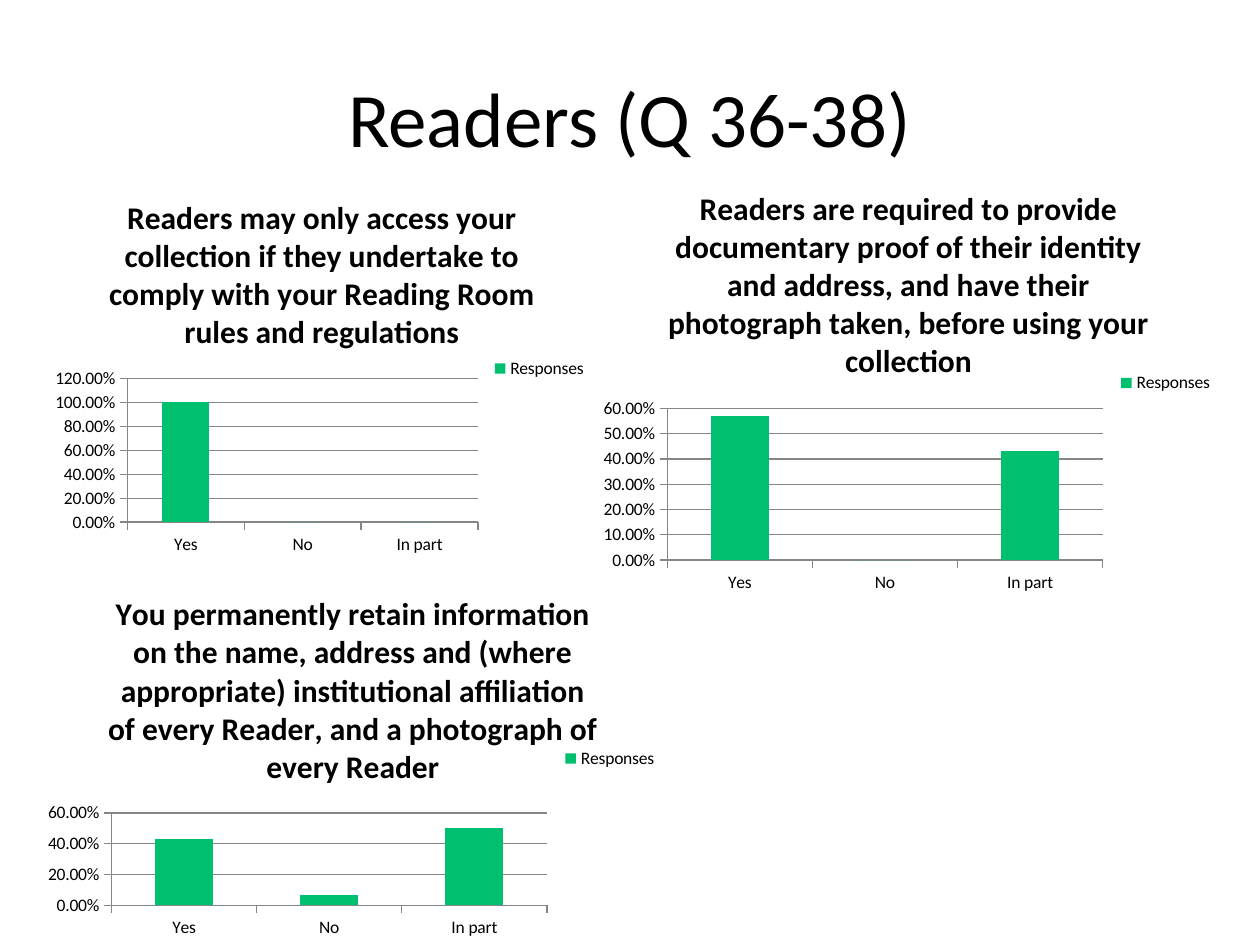
from dataclasses import dataclass

from pptx import Presentation
from pptx.chart.data import CategoryChartData
from pptx.dml.color import RGBColor
from pptx.enum.chart import XL_CHART_TYPE, XL_LEGEND_POSITION, XL_TICK_MARK
from pptx.enum.text import MSO_ANCHOR, PP_ALIGN
from pptx.util import Inches, Pt

COLUMN = XL_CHART_TYPE.COLUMN_CLUSTERED
RIGHT = XL_LEGEND_POSITION.RIGHT
OUT = XL_TICK_MARK.OUTSIDE
NONE = XL_TICK_MARK.NONE
CENTER = PP_ALIGN.CENTER
MIDDLE = MSO_ANCHOR.MIDDLE


@dataclass(frozen=True)
class Theme:
    font: str = "Calibri"
    ink: RGBColor = RGBColor(0, 0, 0)
    bar: RGBColor = RGBColor(0x00, 0xBF, 0x6F)
    grid: RGBColor = RGBColor(0x86, 0x86, 0x86)
    title: int = 44
    head: int = 18
    label: int = 10


ANSWERS = ["Yes", "No", "In part"]
# Question, box in inches, shares per answer, axis maximum, axis step
CHARTS = [
    ("Readers may only access your collection if they undertake to comply "
     "with your Reading Room rules and regulations",
     (0.35, 1.39, 4.41, 3.07), (1, 0, 0), 1.2, 0.2),
    ("Readers are required to provide documentary proof of their identity "
     "and address, and have their photograph taken, before using your collection",
     (4.69, 1.31, 5.04, 3.46), (0.57, 0, 0.43), 0.6, 0.1),
    ("You permanently retain information on the name, address and (where "
     "appropriate) institutional affiliation of every Reader, and a "
     "photograph of every Reader",
     (0.28, 4.54, 5.04, 2.96), (0.43, 0.07, 0.5), 0.6, 0.2),
]


def style(font, theme, size, bold=False):
    font.name = theme.font
    font.size = Pt(size)
    font.bold = bold
    font.color.rgb = theme.ink


def write(frame, text, *, theme, size, bold=False):
    """Fill a text frame with one centred, formatted paragraph."""
    para = frame.paragraphs[0]
    para.alignment = CENTER
    run = para.add_run()
    run.text = text
    style(run.font, theme, size, bold)


class Deck:
    """Holds the theme and the slide being built."""

    def __init__(self, slide, theme):
        self.slide = slide
        self.theme = theme

    def title(self, text, box):
        shape = self.slide.shapes.title
        shape.left, shape.top, shape.width, shape.height = map(Inches, box)
        frame = shape.text_frame
        frame.word_wrap = True
        frame.vertical_anchor = MIDDLE
        write(frame, text, theme=self.theme, size=self.theme.title)

    def chart(self, text, box, shares, top, step):
        theme = self.theme
        data = CategoryChartData(number_format="0.00%")
        data.categories = ANSWERS
        data.add_series("Responses", shares)
        chart = self.slide.shapes.add_chart(COLUMN, *map(Inches, box), data).chart
        style(chart.font, theme, theme.label)
        chart.has_title = True
        write(chart.chart_title.text_frame, text,
              theme=theme, size=theme.head, bold=True)
        chart.has_legend = True
        chart.legend.position = RIGHT
        chart.legend.include_in_layout = False

        plot = chart.plots[0]
        plot.gap_width = 150
        plot.vary_by_categories = False
        fill = plot.series[0].format.fill
        fill.solid()
        fill.fore_color.rgb = theme.bar

        shares_axis = chart.value_axis
        shares_axis.minimum_scale = 0
        shares_axis.maximum_scale = top
        shares_axis.major_unit = step
        shares_axis.has_major_gridlines = True
        shares_axis.tick_labels.number_format = "0.00%"
        shares_axis.tick_labels.number_format_is_linked = False
        self.line(shares_axis.major_gridlines.format.line)
        for axis in (chart.category_axis, shares_axis):
            axis.major_tick_mark = OUT
            axis.minor_tick_mark = NONE
            self.line(axis.format.line)

    def line(self, line):
        line.color.rgb = self.theme.grid
        line.width = Pt(0.75)


def main():
    prs = Presentation()
    prs.slide_width, prs.slide_height = Inches(10), Inches(7.5)
    deck = Deck(prs.slides.add_slide(prs.slide_layouts[5]), Theme())
    deck.title("Readers (Q 36-38)", (0.5, 0.3, 9, 1.25))
    for item in CHARTS:
        deck.chart(*item)
    prs.save("out.pptx")


if __name__ == "__main__":
    main()
